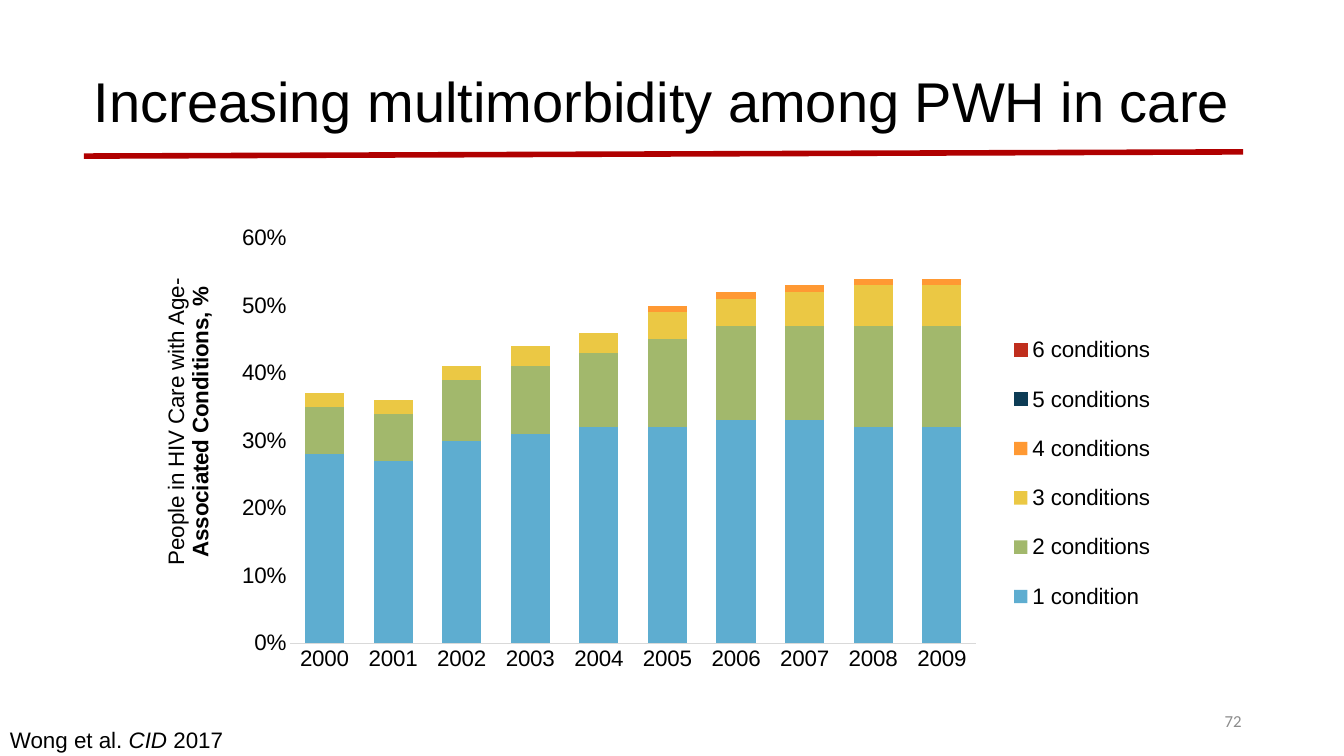
from lxml.etree import SubElement
from pptx import Presentation
from pptx.chart.data import CategoryChartData
from pptx.dml.color import RGBColor
from pptx.enum.chart import XL_CHART_TYPE, XL_LEGEND_POSITION, XL_TICK_MARK
from pptx.enum.shapes import MSO_CONNECTOR
from pptx.enum.text import MSO_ANCHOR, PP_ALIGN
from pptx.oxml.ns import qn
from pptx.util import Pt

BLACK = RGBColor(0x00, 0x00, 0x00)
GREY = RGBColor(0x8C, 0x8C, 0x8C)
AXIS_GREY = RGBColor(0xD9, 0xD9, 0xD9)
RULE_RED = RGBColor(0xB0, 0x00, 0x00)
BLUE = RGBColor(0x5E, 0xAD, 0xD0)
GREEN = RGBColor(0xA2, 0xB8, 0x6C)
YELLOW = RGBColor(0xEB, 0xC8, 0x44)
ORANGE = RGBColor(0xFF, 0x99, 0x33)
NAVY = RGBColor(0x0D, 0x3C, 0x55)
RED = RGBColor(0xC0, 0x2E, 0x1D)

YEARS = [str(year) for year in range(2000, 2010)]
CONDITIONS = [
    ("1 condition", BLUE, (0.28, 0.27, 0.3, 0.31, 0.32, 0.32, 0.33, 0.33, 0.32, 0.32)),
    ("2 conditions", GREEN, (0.07, 0.07, 0.09, 0.1, 0.11, 0.13, 0.14, 0.14, 0.15, 0.15)),
    ("3 conditions", YELLOW, (0.02, 0.02, 0.02, 0.03, 0.03, 0.04, 0.04, 0.05, 0.06, 0.06)),
    ("4 conditions", ORANGE, (0, 0, 0, 0, 0, 0.01, 0.01, 0.01, 0.01, 0.01)),
    ("5 conditions", NAVY, (0,) * 10),
    ("6 conditions", RED, (0,) * 10),
]
OUTLINED = ("5 conditions", "6 conditions")


def add_run(paragraph, text, size=16, font="Arial", color=BLACK, bold=False, italic=False):
    """Add a run of text in the given format."""
    run = paragraph.add_run()
    run.text = text
    style = run.font
    style.size, style.name, style.bold, style.italic = Pt(size), font, bold, italic
    style.color.rgb = color


def place(element, position, target=None, **fractions):
    """Give a chart part a manual layout in fractions of the chart."""
    for former in element.findall(qn("c:layout")):
        element.remove(former)
    layout = SubElement(element, qn("c:layout"))
    element.insert(position, layout)
    manual = SubElement(layout, qn("c:manualLayout"))
    settings = {"layoutTarget": target} if target else {}
    settings.update(xMode="edge", yMode="edge", **fractions)
    for name, setting in settings.items():
        SubElement(manual, qn("c:" + name)).set("val", str(setting))


class SlideBuilder:
    """Hold the text style and the current slide."""

    def __init__(self, slide, font="Arial", size=16):
        self.slide, self.font, self.size = slide, font, size

    def text(self, box, runs, align=PP_ALIGN.LEFT, anchor=MSO_ANCHOR.TOP, wrap=True, spacing=1.0):
        frame = self.slide.shapes.add_textbox(*map(Pt, box)).text_frame
        frame.word_wrap, frame.vertical_anchor = wrap, anchor
        paragraph = frame.paragraphs[0]
        paragraph.alignment, paragraph.line_spacing = align, spacing
        for words, style in runs:
            add_run(paragraph, words, **{"font": self.font, "size": self.size, **style})

    def rule(self, ends, color, width):
        rule = self.slide.shapes.add_connector(MSO_CONNECTOR.STRAIGHT, *map(Pt, ends))
        rule.line.color.rgb, rule.line.width = color, Pt(width)
        SubElement(rule._element.spPr, qn("a:effectLst"))

    def style(self, font):
        font.name, font.size, font.color.rgb = self.font, Pt(self.size), BLACK

    def stacked_columns(self, box, categories, layers, axis_lines):
        table = CategoryChartData(number_format="0%")
        table.categories = categories
        for name, _, shares in layers:
            table.add_series(name, shares)
        chart = self.slide.shapes.add_chart(
            XL_CHART_TYPE.COLUMN_STACKED, *map(Pt, box), table).chart
        self.style(chart.font)
        chart.has_title = False

        plot = chart.plots[0]
        plot.gap_width, plot.overlap, plot.vary_by_categories = 75, 100, False
        for series, (name, color, _) in zip(plot.series, layers):
            series.format.fill.solid()
            series.format.fill.fore_color.rgb = color
            if name in OUTLINED:
                series.format.line.color.rgb = color
                series.format.line.width = Pt(0.75)

        years, shares = chart.category_axis, chart.value_axis
        for axis in (years, shares):
            axis.major_tick_mark = axis.minor_tick_mark = XL_TICK_MARK.NONE
            axis.has_major_gridlines = False
            self.style(axis.tick_labels.font)
        years.format.line.color.rgb, years.format.line.width = AXIS_GREY, Pt(0.75)
        shares.format.line.fill.background()
        shares.minimum_scale, shares.maximum_scale, shares.major_unit = 0, 0.6, 0.1
        shares.tick_labels.number_format = "0%"
        shares.tick_labels.number_format_is_linked = False

        heading = shares.axis_title.text_frame
        for index, (words, bold) in enumerate(axis_lines):
            paragraph = heading.add_paragraph() if index else heading.paragraphs[0]
            add_run(paragraph, words, size=self.size, font=self.font, bold=bold)
        heading._txBody.bodyPr.set("rot", "-5400000")
        heading._txBody.bodyPr.set("vert", "horz")

        chart.has_legend = True
        chart.legend.position = XL_LEGEND_POSITION.RIGHT
        chart.legend.include_in_layout = False
        self.style(chart.legend.font)
        place(shares.axis_title._element, 1, x=0.01, y=0.13)
        place(chart.legend._element, 1, x=0.85, y=0.21, w=0.15, h=0.69)
        place(chart._chartSpace.chart.plotArea, 0, "inner", x=0.14, y=0.05, w=0.68, h=0.87)


def main():
    deck = Presentation()
    deck.slide_width, deck.slide_height = Pt(960), Pt(540)
    builder = SlideBuilder(deck.slides.add_slide(deck.slide_layouts[6]))
    builder.text((60, 29.5, 863, 90),
                 [("Increasing multimorbidity among PWH in care", {"size": 40})],
                 anchor=MSO_ANCHOR.MIDDLE, spacing=0.9)
    builder.text((0, 515, 168.5, 26.5),
                 [("Wong et al. ", {}), ("CID", {"italic": True}), (" 2017", {})], wrap=False)
    builder.stacked_columns((106.5, 153.5, 720.5, 332.5), YEARS, CONDITIONS,
                            [("People in HIV Care with Age-", False),
                             ("Associated Conditions, %", True)])
    builder.rule((60, 111.5, 888, 108.5), RULE_RED, 4)
    builder.text((678, 500.5, 216, 29),
                 [("72", {"size": 12, "font": "Calibri", "color": GREY})],
                 align=PP_ALIGN.RIGHT, anchor=MSO_ANCHOR.MIDDLE)
    deck.save("out.pptx")


if __name__ == "__main__":
    main()
